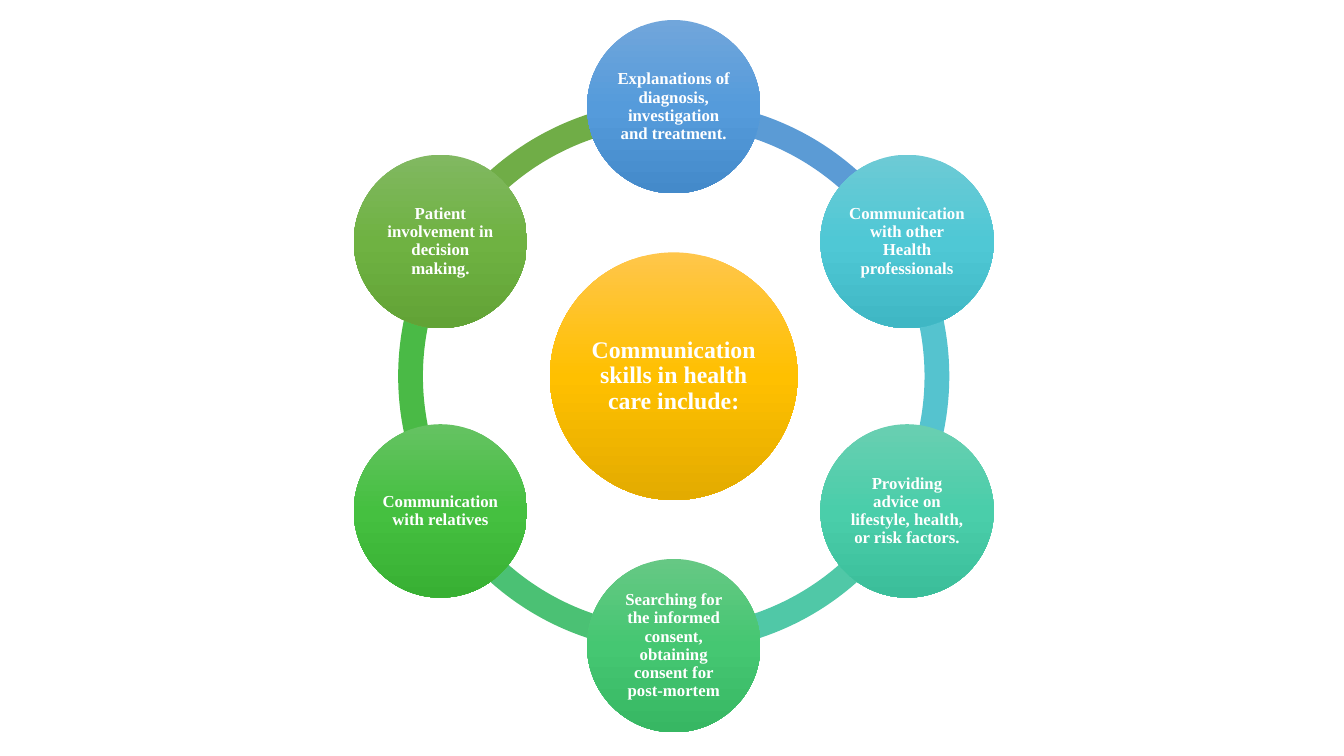
"""Build a slide with a hub circle and six topic circles on a coloured ring."""
from copy import deepcopy
from math import cos, radians, sin
from typing import NamedTuple

from pptx import Presentation
from pptx.dml.color import RGBColor
from pptx.enum.shapes import MSO_SHAPE as Preset
from pptx.enum.text import MSO_ANCHOR as Anchor, PP_ALIGN as Align
from pptx.oxml.ns import qn
from pptx.shapes.autoshape import Shape
from pptx.slide import Slide
from pptx.util import Cm, Pt

WHITE = RGBColor(0xFF, 0xFF, 0xFF)
AMBER = ("FFC64B", "FFC000", "E3AB00")
FONT = "Times New Roman"
CENTER_X, CENTER_Y = 16.98, 9.48
RING_SIZE = 13.89
RING_THICKNESS = 0.045
ORBIT_RADIUS = 6.79
HUB_SIZE, TOPIC_SIZE = 6.24, 4.37
INSET = 0.05
ANGLE_UNIT = 0.6
FIRST_ANGLE = 270


class Topic(NamedTuple):
    text: str
    arc_color: RGBColor
    shades: tuple[str, str, str]


TOPICS = [
    Topic("Explanations of diagnosis, investigation and treatment.",
          RGBColor(0x5B, 0x9B, 0xD5), ("71A6DB", "559BDB", "448ACA")),
    Topic("Communication with other Health professionals",
          RGBColor(0x55, 0xC3, 0xCF), ("6DCAD5", "4FC8D5", "3FB7C4")),
    Topic("Providing advice on lifestyle, health, or risk factors.",
          RGBColor(0x50, 0xC8, 0xA7), ("69CFB1", "4ACEAA", "3BBE9A")),
    Topic("Searching for the informed consent, obtaining consent for post-mortem",
          RGBColor(0x4B, 0xC1, 0x74), ("66C884", "45C772", "37B763")),
    Topic("Communication with relatives",
          RGBColor(0x4A, 0xBA, 0x46), ("65C262", "45C040", "38B033")),
    Topic("Patient involvement in decision making.",
          RGBColor(0x70, 0xAD, 0x47), ("81B861", "6FB242", "62A336")),
]
STEP = 360 / len(TOPICS)


def add_centered(page: Slide, preset: Preset, x: float, y: float, size: float) -> Shape:
    """Add a plain square-framed shape around a centre point."""
    shape = page.shapes.add_shape(
        preset, Cm(x - size / 2), Cm(y - size / 2), Cm(size), Cm(size))
    shape.shadow.inherit = False
    shape.line.fill.background()
    return shape


def add_arc(page: Slide, start: float, color: RGBColor) -> None:
    """Add one segment of the ring."""
    arc = add_centered(page, Preset.BLOCK_ARC, CENTER_X, CENTER_Y, RING_SIZE)
    arc.adjustments[0] = start % 360 * ANGLE_UNIT
    arc.adjustments[1] = (start + STEP) % 360 * ANGLE_UNIT
    arc.adjustments[2] = RING_THICKNESS
    arc.fill.solid()
    arc.fill.fore_color.rgb = color


def shade(shape: Shape, shades: tuple[str, str, str]) -> None:
    """Fill a shape with a three-stop gradient from top to bottom."""
    shape.fill.gradient()
    shape.fill.gradient_angle = 270
    first = next(shape.element.spPr.iter(qn("a:gs")))
    first.addnext(deepcopy(first))
    for stop, position, color in zip(shape.fill.gradient_stops, (0, 0.5, 1), shades):
        stop.position = position
        stop.color.rgb = RGBColor.from_string(color)


def add_circle(page: Slide, x: float, y: float, size: float, text: str,
               points: int, shades: tuple[str, str, str]) -> None:
    """Add a shaded circle with centred bold text."""
    circle = add_centered(page, Preset.OVAL, x, y, size)
    shade(circle, shades)
    frame = circle.text_frame
    frame.word_wrap = True
    frame.vertical_anchor = Anchor.MIDDLE
    frame.margin_left = frame.margin_right = Cm(INSET)
    frame.margin_top = frame.margin_bottom = Cm(INSET)
    para = frame.paragraphs[0]
    para.text = text
    para.alignment = Align.CENTER
    para.line_spacing = 0.9
    para.font.name = FONT
    para.font.size = Pt(points)
    para.font.bold = True
    para.font.color.rgb = WHITE


def main() -> None:
    """Draw the ring, the hub and the topics, then save the deck."""
    deck = Presentation()
    deck.slide_width, deck.slide_height = Cm(33.87), Cm(19.05)
    page = deck.slides.add_slide(deck.slide_layouts[6])
    placed = [(FIRST_ANGLE + STEP * index, topic) for index, topic in enumerate(TOPICS)]
    for angle, topic in reversed(placed):
        add_arc(page, angle, topic.arc_color)
    add_circle(page, CENTER_X, CENTER_Y, HUB_SIZE,
               "Communication skills in health care include:", 17, AMBER)
    for angle, topic in placed:
        x = CENTER_X + ORBIT_RADIUS * cos(radians(angle))
        y = CENTER_Y + ORBIT_RADIUS * sin(radians(angle))
        add_circle(page, x, y, TOPIC_SIZE, topic.text, 12, topic.shades)
    deck.save("out.pptx")


if __name__ == "__main__":
    main()
